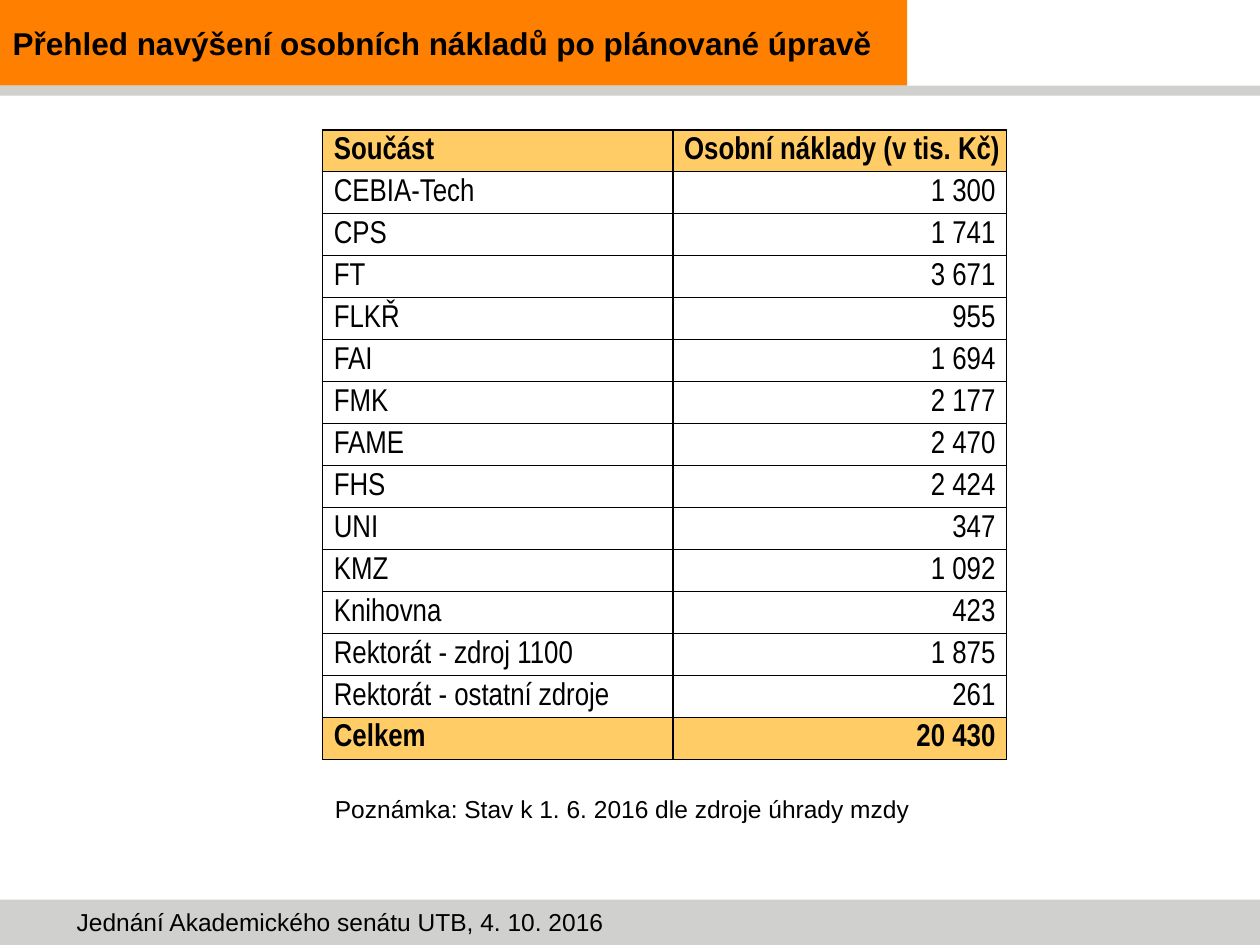
from lxml import etree
from pptx import Presentation
from pptx import util as u
from pptx.dml.color import RGBColor
from pptx.enum import shapes, text
from pptx.oxml import ns

ORANGE = RGBColor(0xFF, 0x80, 0x01)
GRAY = RGBColor(0xD0, 0xD0, 0xCE)
YELLOW = RGBColor(0xFF, 0xCC, 0x66)
BLACK = RGBColor(0, 0, 0)

COSTS = [
    ("Součást", "Osobní náklady (v tis. Kč)"),
    ("CEBIA-Tech", "1 300"),
    ("CPS", "1 741"),
    ("FT", "3 671"),
    ("FLKŘ", "955"),
    ("FAI", "1 694"),
    ("FMK", "2 177"),
    ("FAME", "2 470"),
    ("FHS", "2 424"),
    ("UNI", "347"),
    ("KMZ", "1 092"),
    ("Knihovna", "423"),
    ("Rektorát - zdroj 1100", "1 875"),
    ("Rektorát - ostatní zdroje", "261"),
    ("Celkem", "20 430"),
]


class SlideBuilder:
    """Hold the style and the current slide, and add its elements."""

    def __init__(self, slide, font="Arial", table_font="Arial Narrow"):
        self.slide = slide
        self.font = font
        self.table_font = table_font

    def set_text(self, text_frame, content, size, font, bold=False):
        text_frame.text = content
        paragraph = text_frame.paragraphs[0]
        for run in paragraph.runs:
            run.font.name = font
            run.font.size = u.Pt(size)
            run.font.bold = bold
            run.font.color.rgb = BLACK
        return paragraph

    def place(self, shape, box):
        shape.left, shape.top, shape.width, shape.height = map(u.Inches, box)

    def bar(self, box, color):
        shape = self.slide.shapes.add_shape(
            shapes.MSO_SHAPE.RECTANGLE, *map(u.Inches, box))
        shape.shadow.inherit = False
        shape.fill.solid()
        shape.fill.fore_color.rgb = color
        shape.line.fill.background()

    def title(self, content, box):
        title = self.slide.shapes.title
        self.slide.shapes._spTree.append(title._element)
        self.place(title, box)
        text_frame = title.text_frame
        text_frame.auto_size = text.MSO_AUTO_SIZE.NONE
        text_frame.vertical_anchor = text.MSO_ANCHOR.MIDDLE
        paragraph = self.set_text(
            text_frame, content, 18, self.font, bold=True)
        paragraph.alignment = text.PP_ALIGN.LEFT

    def label(self, content, box):
        label = self.slide.shapes.add_textbox(*map(u.Inches, box))
        label.text_frame.word_wrap = True
        self.set_text(label.text_frame, content, 14, self.font)

    def borders(self, cell):
        properties = cell._tc.get_or_add_tcPr()
        for position, side in enumerate(("lnL", "lnR", "lnT", "lnB")):
            line = etree.Element(ns.qn(f"a:{side}"), w=str(u.Pt(1)))
            fill = etree.SubElement(line, ns.qn("a:solidFill"))
            etree.SubElement(fill, ns.qn("a:srgbClr"), val=str(BLACK))
            properties.insert(position, line)

    def cell(self, cell, content, emphasized, right):
        wide, narrow = u.Inches(0.09), u.Inches(0.01)
        cell.margin_left, cell.margin_right = (
            (narrow, wide) if right else (wide, narrow))
        cell.margin_top, cell.margin_bottom = narrow, 0
        cell.vertical_anchor = text.MSO_ANCHOR.MIDDLE
        paragraph = self.set_text(
            cell.text_frame, content, 18, self.table_font, emphasized)
        paragraph.alignment = (
            text.PP_ALIGN.RIGHT if right else text.PP_ALIGN.LEFT)
        if emphasized:
            cell.fill.solid()
            cell.fill.fore_color.rgb = YELLOW
        else:
            cell.fill.background()
        self.borders(cell)

    def table(self, rows, box, widths):
        table = self.slide.shapes.add_table(
            len(rows), len(widths), *map(u.Inches, box)).table
        for column, width in zip(table.columns, widths):
            column.width = u.Inches(width)
        last = len(rows) - 1
        for i, row in enumerate(rows):
            for j, content in enumerate(row):
                self.cell(table.cell(i, j), content,
                          emphasized=i in (0, last), right=i > 0 and j > 0)


def main():
    presentation = Presentation()
    presentation.slide_width = u.Inches(10)
    presentation.slide_height = u.Inches(7.5)
    slide = presentation.slides.add_slide(presentation.slide_layouts[5])
    builder = SlideBuilder(slide)
    builder.bar((0, 0, 7.2, 0.68), ORANGE)
    builder.bar((0, 7.14, 10, 0.36), GRAY)
    builder.bar((0, 0.68, 10, 0.08), GRAY)
    builder.label("Jednání Akademického senátu UTB, 4. 10. 2016",
                  (0.51, 7.15, 9.21, 0.34))
    builder.title("Přehled navýšení osobních nákladů po plánované úpravě",
                  (0, 0, 7.2, 0.68))
    builder.table(COSTS, (2.56, 1.03, 5.43, 5), (2.78, 2.65))
    builder.label("Poznámka: Stav k 1. 6. 2016 dle zdroje úhrady mzdy",
                  (2.56, 6.25, 4.8, 0.57))
    presentation.save("out.pptx")


if __name__ == "__main__":
    main()
